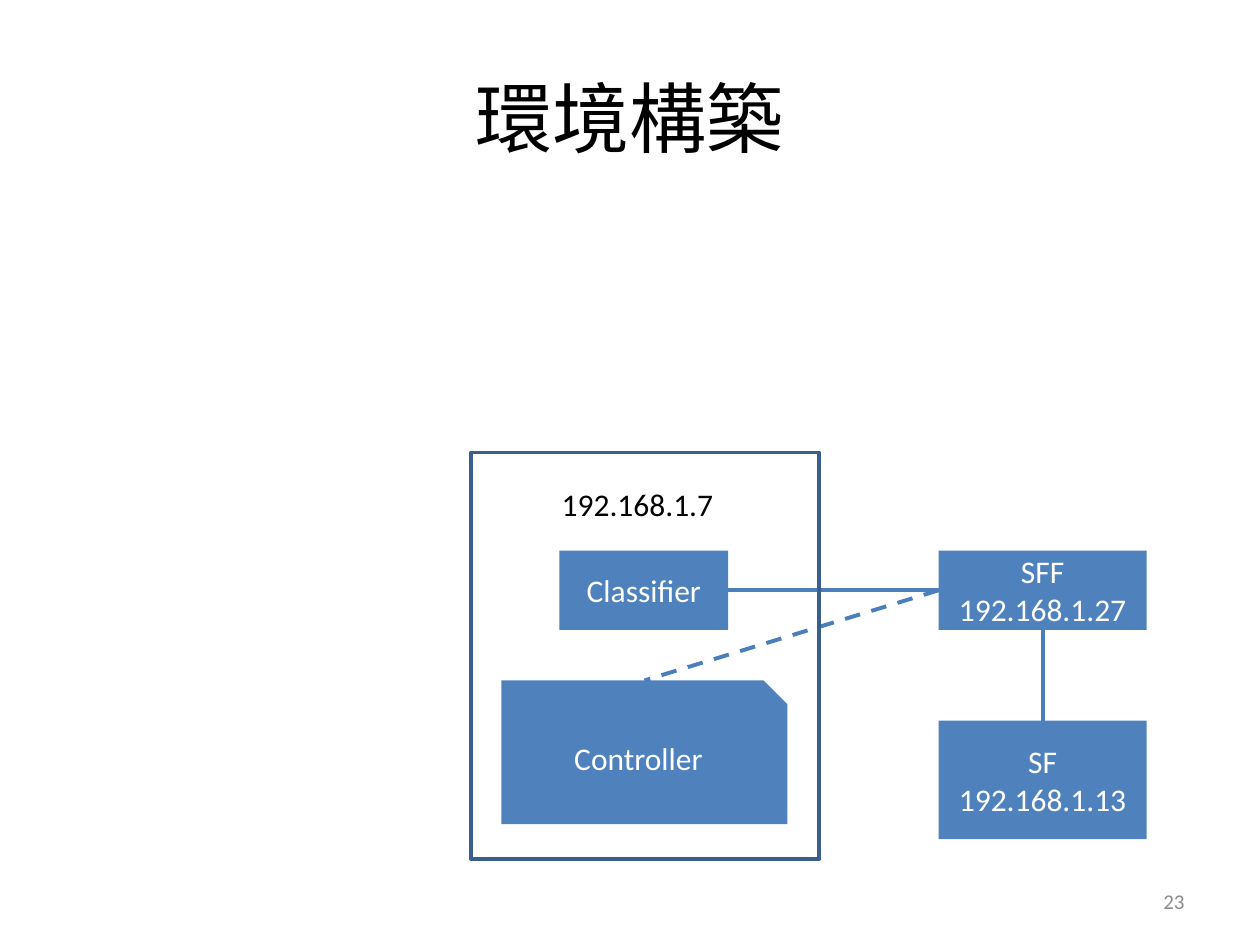
from pptx import Presentation
from pptx import util as u
from pptx.dml.color import RGBColor
from pptx.enum import dml, shapes, text
from pptx.oxml.ns import qn
from lxml import etree

BLACK = RGBColor(0x00, 0x00, 0x00)
WHITE = RGBColor(0xFF, 0xFF, 0xFF)
GREY = RGBColor(0x8C, 0x8C, 0x8C)
NODE_BLUE = RGBColor(0x4F, 0x81, 0xBD)
LINK_BLUE = RGBColor(0x4B, 0x7E, 0xBC)
HOST_BLUE = RGBColor(0x3A, 0x5F, 0x8C)

# Grid of 100 columns by 75 rows
WIDTH, HEIGHT = u.Inches(10), u.Inches(7.5)
COLUMN, ROW = WIDTH / 100, HEIGHT / 75

RECT = shapes.MSO_SHAPE.RECTANGLE
TOP, LEFT, BOTTOM, RIGHT = range(4)


def place(column, row, columns, rows):
    return [round(n * unit) for n, unit in
            zip((column, row, columns, rows), (COLUMN, ROW) * 2)]


def write(holder, lines, size, color, align, wrap=True):
    frame = holder.text_frame
    frame.word_wrap = wrap
    frame.vertical_anchor = text.MSO_ANCHOR.MIDDLE
    frame.text = "\n".join(lines)
    for paragraph in frame.paragraphs:
        paragraph.alignment = align
        font_format = {"name": "Calibri", "size": u.Pt(size)}
        for key, value in font_format.items():
            setattr(paragraph.font, key, value)
        paragraph.font.color.rgb = color


def add_label(slide, area, words, size, color, align, wrap=True):
    label = slide.shapes.add_textbox(*place(*area))
    write(label, [words], size, color, align, wrap)


def add_node(slide, area, *lines, outline=RECT):
    node = slide.shapes.add_shape(outline, *place(*area))
    node.shadow.inherit = False
    node.fill.solid()
    node.fill.fore_color.rgb = NODE_BLUE
    node.line.fill.background()
    write(node, lines, 18, WHITE, text.PP_ALIGN.CENTER)
    return node


def add_host(slide, area):
    host = slide.shapes.add_shape(RECT, *place(*area))
    host.shadow.inherit = False
    host.fill.background()
    host.line.color.rgb = HOST_BLUE
    host.line.width = u.Pt(2)


def add_link(slide, start, start_side, end, end_side, dash=None):
    link = slide.shapes.add_connector(shapes.MSO_CONNECTOR.STRAIGHT, 0, 0, 0, 0)
    link.begin_connect(start, start_side)
    link.end_connect(end, end_side)
    link.line.color.rgb = LINK_BLUE
    for key, value in {"width": u.Pt(2.25), "dash_style": dash}.items():
        setattr(link.line, key, value)
    etree.SubElement(link._element.spPr, qn("a:effectLst"))


def main():
    deck = Presentation()
    deck.slide_width, deck.slide_height = WIDTH, HEIGHT
    slide = deck.slides.add_slide(deck.slide_layouts[6])
    align = text.PP_ALIGN

    # Title and page number
    add_label(slide, (5, 3, 90, 12.5), "環境構築", 44, BLACK, align.CENTER)
    add_label(slide, (71.7, 69.5, 23.3, 4), "23", 12, GREY, align.RIGHT)

    # Service chain nodes
    sf = add_node(slide, (74.5, 57.2, 16.5, 9.4), "SF", "192.168.1.13")
    sff = add_node(slide, (74.5, 43.7, 16.5, 6.3), "SFF", "192.168.1.27")
    classifier = add_node(slide, (44.4, 43.7, 13.4, 6.3), "Classifier")
    controller = add_node(slide, (39.8, 54, 22.7, 11.4), "Controller",
                          outline=shapes.MSO_SHAPE.SNIP_1_RECTANGLE)

    # Data links, then the dashed control link
    add_link(slide, classifier, RIGHT, sff, LEFT)
    add_link(slide, sff, BOTTOM, sf, TOP)
    add_link(slide, sff, LEFT, controller, TOP, dml.MSO_LINE.DASH)

    # Host around classifier and controller
    add_host(slide, (37.4, 35.9, 27.6, 32.3))
    add_label(slide, (43.6, 38, 14.2, 4), "192.168.1.7", 18, BLACK,
              align.LEFT, wrap=False)

    deck.save("out.pptx")


if __name__ == "__main__":
    main()
